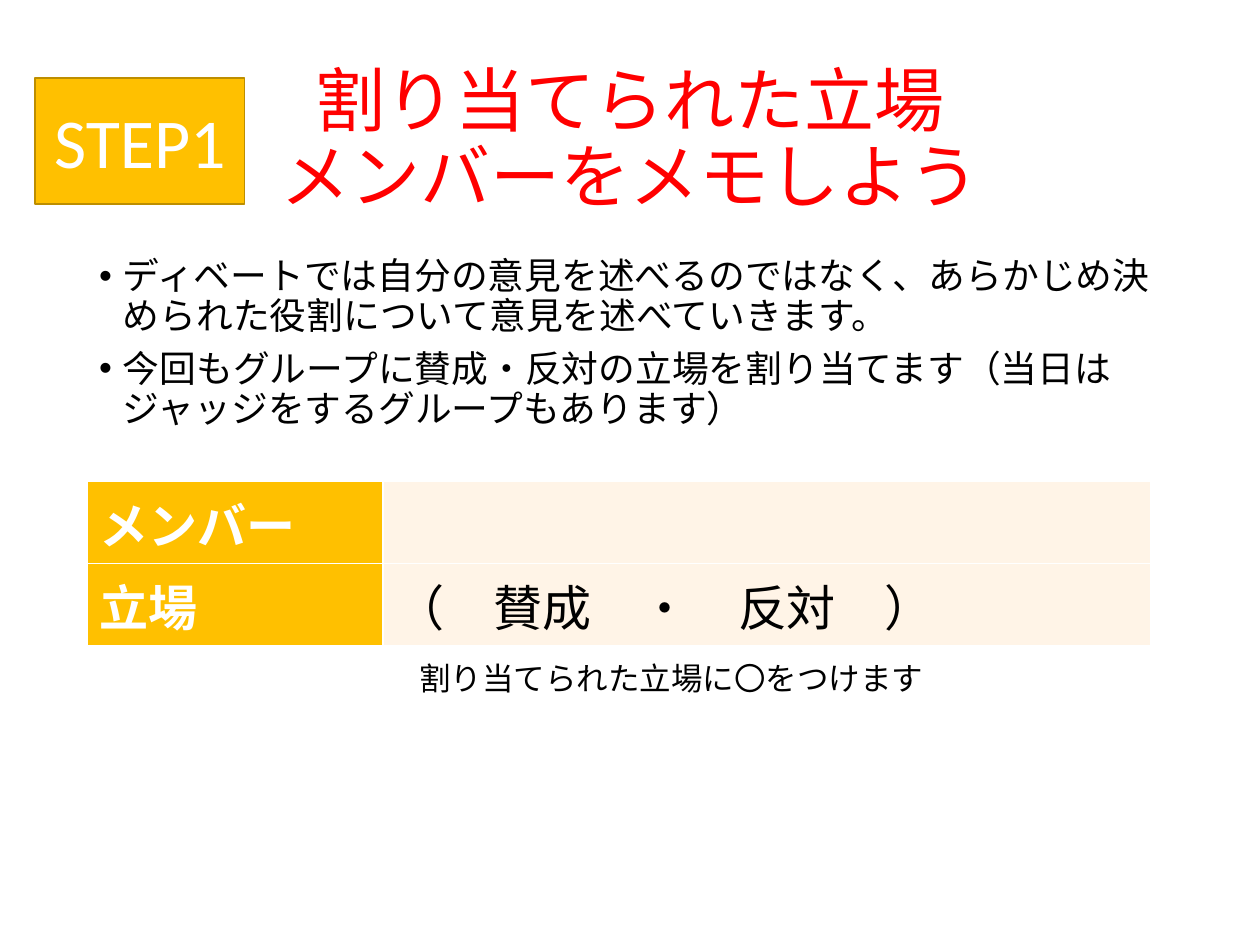
from dataclasses import dataclass
from typing import Any

from lxml.etree import SubElement
from pptx import Presentation
from pptx.dml.color import RGBColor
from pptx.enum.shapes import MSO_SHAPE
from pptx.enum.text import MSO_ANCHOR, PP_ALIGN
from pptx.oxml.ns import qn
from pptx.util import Cm, Pt

GOLD, CREAM, WHITE, BLACK = "FFC000", "FFF4E7", "FFFFFF", "000000"


@dataclass
class Box:
    """Place in centimetres."""
    left: float
    top: float
    width: float
    height: float

    def spot(self) -> list[Cm]:
        """Return the place as lengths."""
        return [Cm(n) for n in (self.left, self.top, self.width, self.height)]


@dataclass
class Style:
    """Look of a text."""
    size: float
    color: str = BLACK
    bold: bool = False
    align: Any = PP_ALIGN.LEFT
    anchor: Any = MSO_ANCHOR.TOP
    line: float = 1.0
    gap: float = 0
    bullet: bool = False


@dataclass
class Note:
    """Text box on the slide."""
    box: Box
    text: str
    style: Style


@dataclass
class Cell:
    """Table cell content."""
    text: str
    fill: str
    color: str
    bold: bool = False


def tint(target: Any, code: str) -> None:
    """Colour a fill or a font from a hex string."""
    if hasattr(target, "solid"):
        target.solid()
        target.fore_color.rgb = RGBColor.from_string(code)
    else:
        target.color.rgb = RGBColor.from_string(code)


def dot(para: Any) -> None:
    """Give a paragraph a hanging bullet."""
    props = para._p.get_or_add_pPr()
    props.set("marL", str(Cm(0.48)))
    props.set("indent", str(-Cm(0.48)))
    SubElement(props, qn("a:buFont"), typeface="Arial")
    SubElement(props, qn("a:buChar"), char="•")


def write(frame: Any, text: str, style: Style) -> None:
    """Put styled text in a frame."""
    frame.text = text
    frame.word_wrap = True
    frame.vertical_anchor = style.anchor
    for para in frame.paragraphs:
        para.alignment = style.align
        para.line_spacing = style.line
        para.space_before = Pt(style.gap)
        if style.bullet:
            dot(para)
        for run in para.runs:
            run.font.name = "Calibri"
            run.font.size = Pt(style.size)
            run.font.bold = style.bold
            tint(run.font, style.color)


def frame_cell(cell: Any) -> None:
    """Draw white borders round a cell."""
    props = cell._tc.get_or_add_tcPr()
    for spot, side in enumerate(("lnL", "lnR", "lnT", "lnB")):
        edge = props.makeelement(qn(f"a:{side}"), {"w": str(Pt(1))})
        fill = SubElement(edge, qn("a:solidFill"))
        SubElement(fill, qn("a:srgbClr"), val=WHITE)
        props.insert(spot, edge)


def add_note(slide: Any, note: Note) -> None:
    """Add a text box."""
    shape = slide.shapes.add_textbox(*note.box.spot())
    write(shape.text_frame, note.text, note.style)


def add_badge(slide: Any, note: Note) -> None:
    """Add the step badge."""
    shape = slide.shapes.add_shape(MSO_SHAPE.RECTANGLE, *note.box.spot())
    shape.shadow.inherit = False
    tint(shape.fill, GOLD)
    tint(shape.line, "BD8E00")
    shape.line.width = Pt(1)
    write(shape.text_frame, note.text, note.style)


def add_grid(slide: Any, box: Box, cols: list[float], rows: list[list[Cell]]) -> None:
    """Add the memo table."""
    table = slide.shapes.add_table(len(rows), len(cols), *box.spot()).table
    for col, width in zip(table.columns, cols):
        col.width = Cm(width)
    for r, row in enumerate(rows):
        for c, item in enumerate(row):
            cell = table.cell(r, c)
            tint(cell.fill, item.fill)
            frame_cell(cell)
            if item.text:
                write(cell.text_frame, item.text, Style(28, item.color, item.bold))


def main() -> None:
    """Build the slide."""
    deck = Presentation()
    deck.slide_width, deck.slide_height = Cm(25.4), Cm(19.05)
    slide = deck.slides.add_slide(deck.slide_layouts[6])
    mid = {"align": PP_ALIGN.CENTER, "anchor": MSO_ANCHOR.MIDDLE}
    points = [
        "ディベートでは自分の意見を述べるのではなく、あらかじめ決められた役割について意見を述べていきます。",
        "今回もグループに賛成・反対の立場を割り当てます（当日はジャッジをするグループもあります）",
    ]
    notes = [
        Note(Box(1.75, 1.02, 21.9, 3.68), "割り当てられた立場\vメンバーをメモしよう",
             Style(40, "FF0000", line=0.9, **mid)),
        Note(Box(1.75, 5.08, 21.9, 4.24), "\n".join(points),
             Style(21, line=0.9, gap=7.5, bullet=True)),
        Note(Box(8.2, 13.16, 15.21, 1.02), "割り当てられた立場に〇をつけます", Style(18)),
    ]
    for note in notes:
        add_note(slide, note)
    add_badge(slide, Note(Box(0.71, 1.57, 4.22, 2.54), "STEP1", Style(40, WHITE, **mid)))
    rows = [
        [Cell("メンバー", GOLD, WHITE, True), Cell("", CREAM, BLACK)],
        [Cell("立場", GOLD, WHITE, True), Cell("（　賛成　・　反対　）", CREAM, BLACK)],
    ]
    add_grid(slide, Box(1.75, 9.7, 21.44, 3.32), [5.97, 15.47], rows)
    deck.save("out.pptx")


if __name__ == "__main__":
    main()
